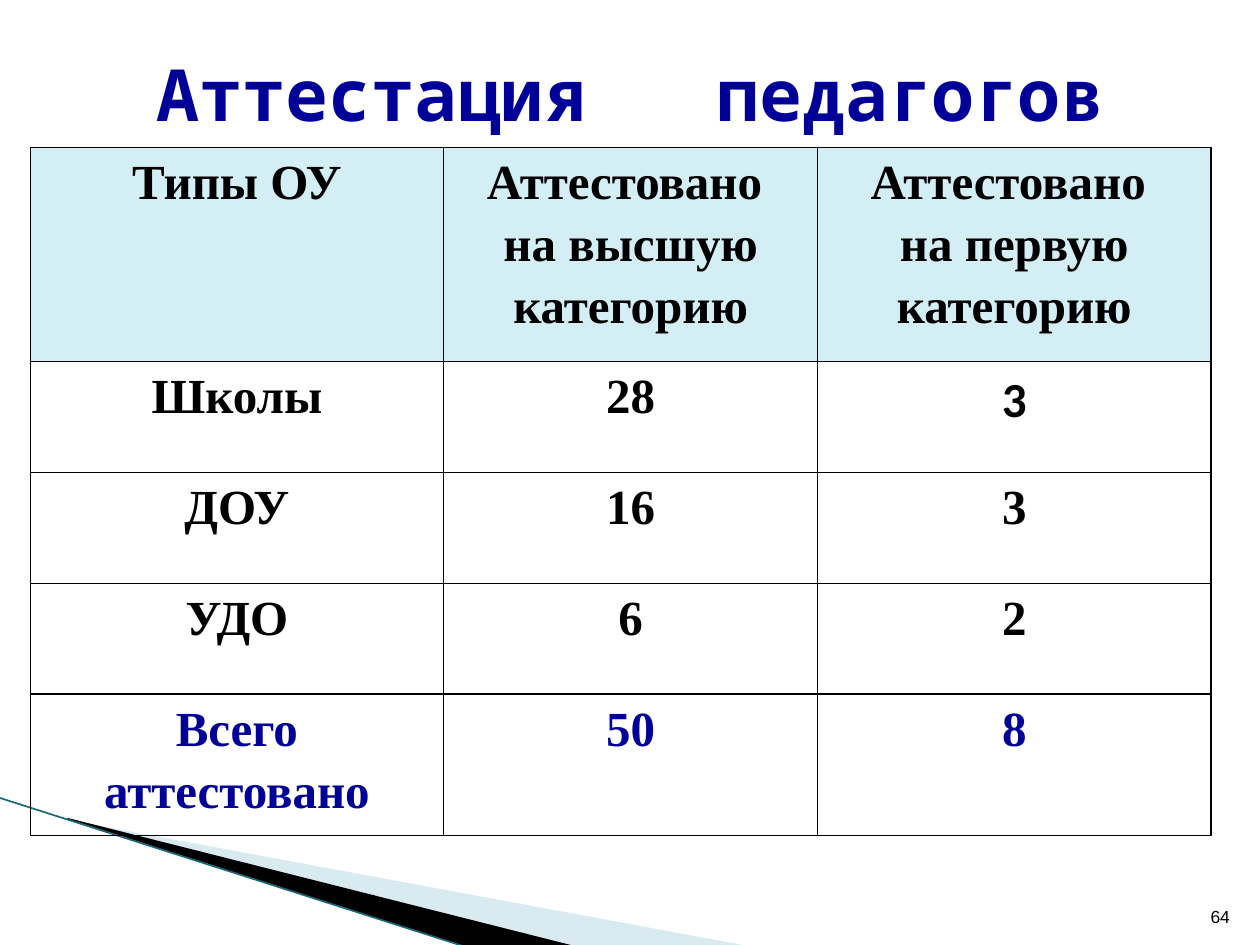
from lxml.etree import SubElement
from pptx import Presentation
from pptx.dml.color import RGBColor
from pptx.enum.shapes import MSO_CONNECTOR
from pptx.enum.text import MSO_ANCHOR, PP_ALIGN
from pptx.oxml.ns import qn
from pptx.util import Inches, Pt

COLORS = {
    "navy": "000099",
    "black": "000000",
    "header": "D3EEF5",
    "pale": "A0CBDC",
    "stripe": "17697A",
}
SERIF = "Times New Roman"
COLUMN_WIDTHS = [3.28, 2.97, 3.12]
ROW_HEIGHTS = [1.7, 0.88, 0.88, 0.88, 1.12]
ROWS = [
    [["Типы ОУ"], ["Аттестовано ", "на высшую категорию"], ["Аттестовано ", "на первую категорию"]],
    [["Школы"], ["28"], ["3"]],
    [["ДОУ"], ["16"], ["3"]],
    [["УДО"], ["6"], ["2"]],
    [["Всего аттестовано"], ["50"], ["8"]],
]
CALIBRI_CELL = (1, 2)


def rgb(name):
    return RGBColor.from_string(COLORS[name])


def add_run(paragraph, text, font_name, size, color, bold=False):
    run = paragraph.add_run()
    run.text = text
    run.font.name = font_name
    run.font.size = Pt(size)
    run.font.bold = bold
    run.font.color.rgb = rgb(color)
    return run


def set_frame(shape, left, top, width, height):
    shift_x, shift_y = shape.left - Inches(left), shape.top - Inches(top)
    shape.left, shape.top = Inches(left), Inches(top)
    shape.width, shape.height = Inches(width), Inches(height)
    outline = next(shape._element.iter(qn("a:path")))
    outline.set("w", str(shape.width))
    outline.set("h", str(shape.height))
    for point in outline.iter(qn("a:pt")):
        point.set("x", str(int(point.get("x")) + shift_x))
        point.set("y", str(int(point.get("y")) + shift_y))


def add_wedge(slide, frame, points, color, alpha=None):
    corners = [(Inches(x), Inches(y)) for x, y in points]
    builder = slide.shapes.build_freeform(*corners[0])
    builder.add_line_segments(corners[1:], close=True)
    shape = builder.convert_to_shape()
    set_frame(shape, *frame)
    shape.shadow.inherit = False
    shape.fill.solid()
    shape.fill.fore_color.rgb = rgb(color)
    shape.line.fill.background()
    if alpha is not None:
        fill_color = shape.fill._xPr.find(qn("a:solidFill"))[0]
        SubElement(fill_color, qn("a:alpha"), val=str(alpha * 1000))


def add_corner_decoration(slide, left, top):
    def place(points):
        return [(left + x, top + y) for x, y in points]

    pale_points = place([(0.55, 0.18), (5.95, 1.18), (4.56, 1.18), (0.55, 0.17)])
    black_points = place([(0.53, 0.16), (4.57, 1.18), (3.72, 1.19), (0.54, 0.17)])
    add_wedge(slide, (left + 0.78, top - 0.86, 4.16, 1.58), pale_points, "pale", 40)
    add_wedge(slide, (left - 0.06, top, 4.16, 0.92), black_points, "black")
    (x1, y1), (x2, y2) = place([(-0.01, 0), (3.71, 1.19)])
    line = slide.shapes.add_connector(
        MSO_CONNECTOR.STRAIGHT, Inches(x1), Inches(y1), Inches(x2), Inches(y2)
    )
    line.line.color.rgb = rgb("stripe")
    line.line.width = Pt(0.95)
    SubElement(line._element.spPr, qn("a:effectLst"))


def add_title(slide, left, top, width, height):
    title = slide.shapes.title
    title.left, title.top = Inches(left), Inches(top)
    title.width, title.height = Inches(width), Inches(height)
    frame = title.text_frame
    frame.vertical_anchor = MSO_ANCHOR.MIDDLE
    paragraph = frame.paragraphs[0]
    paragraph.alignment = PP_ALIGN.CENTER
    for text in ("Аттестация", " ", "педагогов"):
        run = add_run(paragraph, text, "Noto Sans Mono", 41, "navy", bold=True)
        if text == " ":
            run.font._element.set("spc", "4920")


def add_page_number(slide, left, top, width, height):
    box = slide.shapes.add_textbox(Inches(left), Inches(top), Inches(width), Inches(height))
    frame = box.text_frame
    frame.word_wrap = True
    frame.vertical_anchor = MSO_ANCHOR.BOTTOM
    paragraph = frame.paragraphs[0]
    paragraph.alignment = PP_ALIGN.RIGHT
    add_run(paragraph, "64", "Arial", 10, "black")


def add_borders(cell):
    properties = cell._tc.get_or_add_tcPr()
    for index, side in enumerate(("lnL", "lnR", "lnT", "lnB")):
        border = properties.makeelement(qn(f"a:{side}"), {"w": str(Pt(1))})
        fill = SubElement(border, qn("a:solidFill"))
        SubElement(fill, qn("a:srgbClr"), val=COLORS["black"])
        properties.insert(index, border)


def fill_cell(cell, lines, font_name, color, is_header):
    cell.margin_left = cell.margin_right = Inches(0.07)
    cell.margin_top = cell.margin_bottom = 0
    if is_header:
        cell.fill.solid()
        cell.fill.fore_color.rgb = rgb("header")
    else:
        cell.fill.background()
    add_borders(cell)
    frame = cell.text_frame
    for index, text in enumerate(lines):
        paragraph = frame.add_paragraph() if index else frame.paragraphs[0]
        paragraph.alignment = PP_ALIGN.CENTER
        paragraph.line_spacing = 1.15
        add_run(paragraph, text, font_name, 28, color, bold=True)


def add_certification_table(slide, left, top):
    table = slide.shapes.add_table(
        len(ROWS), len(COLUMN_WIDTHS), Inches(left), Inches(top),
        Inches(sum(COLUMN_WIDTHS)), Inches(sum(ROW_HEIGHTS)),
    ).table
    table.first_row = True
    table.horz_banding = False
    for column, width in zip(table.columns, COLUMN_WIDTHS):
        column.width = Inches(width)
    for row, height in zip(table.rows, ROW_HEIGHTS):
        row.height = Inches(height)
    for r, row in enumerate(ROWS):
        color = "navy" if r == len(ROWS) - 1 else "black"
        for c, lines in enumerate(row):
            font_name = "Calibri" if (r, c) == CALIBRI_CELL else SERIF
            fill_cell(table.cell(r, c), lines, font_name, color, r == 0)


def main():
    presentation = Presentation()
    presentation.slide_width = Inches(10)
    presentation.slide_height = Inches(7.5)
    slide = presentation.slides.add_slide(presentation.slide_layouts[5])
    add_corner_decoration(slide, 0, 6.33)
    add_title(slide, 0.5, 0.3, 9, 0.87)
    add_page_number(slide, 9.46, 7.01, 0.4, 0.4)
    add_certification_table(slide, 0.24, 1.17)
    presentation.save("out.pptx")


if __name__ == "__main__":
    main()
